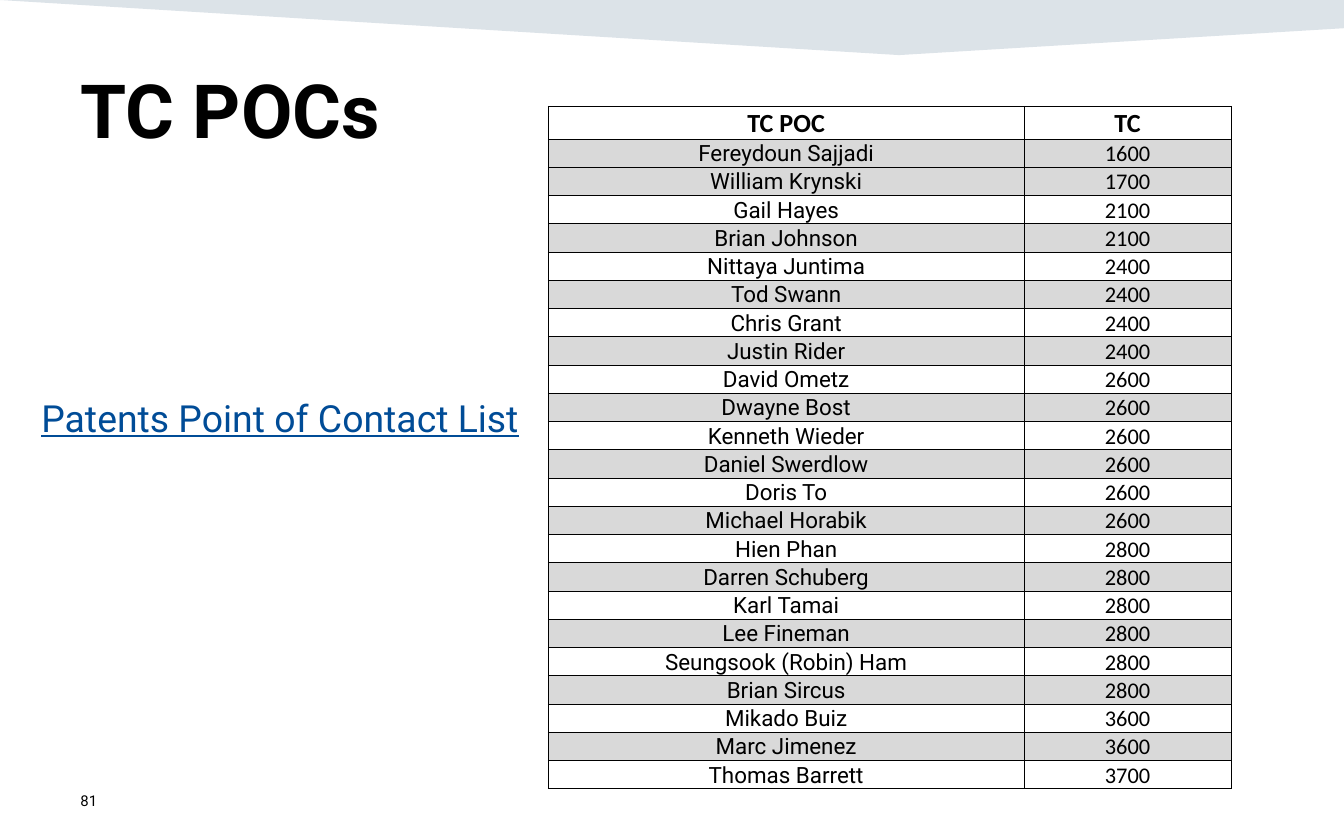
from lxml import etree
from pptx import Presentation
from pptx.dml.color import RGBColor
from pptx.enum.text import MSO_ANCHOR as ANCHOR, PP_ALIGN as ALIGN
from pptx.oxml import parse_xml
from pptx.oxml.ns import nsdecls, qn
from pptx.util import Inches, Pt

BLACK = RGBColor(0x00, 0x00, 0x00)
GREY = RGBColor(0xD9, 0xD9, 0xD9)
NAVY = RGBColor(0x16, 0x44, 0x69)
LINK = RGBColor(0x00, 0x4C, 0x97)

prs = Presentation()
prs.slide_width, prs.slide_height = Inches(10), Inches(6.25)
W, H = prs.slide_width, prs.slide_height
s = prs.slides.add_slide(prs.slide_layouts[6])


def area(*percents):
    """Turn percent of slide width, height, width, height... into lengths."""
    return [round(v * (H if i % 2 else W) / 100) for i, v in enumerate(percents)]


def write(tf, text, font, size, color=BLACK, align=ALIGN.LEFT, bold=False):
    p = tf.paragraphs[0]
    p.text, p.alignment = text, align
    p.font.name, p.font.size, p.font.bold = font, Pt(size), bold
    p.font.color.rgb = color
    return p


# Top band: a shallow translucent wedge
corners = [(0, 0), (100, 0), (100, 3.36), (66.9, 6.56)]
points = [area(*c) for c in corners]
fb = s.shapes.build_freeform(*points[0])
fb.add_line_segments(points[1:], close=True)
band = fb.convert_to_shape()
band.shadow.inherit = False
band.line.fill.background()
band.fill.solid()
band.fill.fore_color.rgb = NAVY
rgb = band.fill._xPr.find(qn("a:solidFill"))[0]
etree.SubElement(rgb, qn("a:alpha"), val="15000")

# Title, slide number and list caption
texts = [
    ("TC POCs", (5, 6.56, 90, 12.48), 40, BLACK, ALIGN.LEFT, ANCHOR.BOTTOM),
    ("81", (5, 92.64, 22.5, 5.28), 8, BLACK, ALIGN.LEFT, ANCHOR.MIDDLE),
    ("Patents Point of Contact List", (1.7, 46.24, 38.3, 7.04), 20, LINK,
     ALIGN.CENTER, ANCHOR.TOP),
]
for text, box, size, color, align, anchor in texts:
    tf = s.shapes.add_textbox(*area(*box)).text_frame
    tf.word_wrap, tf.vertical_anchor = True, anchor
    p = write(tf, text, "Roboto", size, color, align, bold=size == 40)
    p.font.underline = color == LINK

# Contact table
contacts = [
    ("TC POC", "TC"),
    ("Fereydoun Sajjadi", "1600"),
    ("William Krynski", "1700"),
    ("Gail Hayes", "2100"),
    ("Brian Johnson", "2100"),
    ("Nittaya Juntima", "2400"),
    ("Tod Swann", "2400"),
    ("Chris Grant", "2400"),
    ("Justin Rider", "2400"),
    ("David Ometz", "2600"),
    ("Dwayne Bost", "2600"),
    ("Kenneth Wieder", "2600"),
    ("Daniel Swerdlow", "2600"),
    ("Doris To", "2600"),
    ("Michael Horabik", "2600"),
    ("Hien Phan", "2800"),
    ("Darren Schuberg", "2800"),
    ("Karl Tamai", "2800"),
    ("Lee Fineman", "2800"),
    ("Seungsook (Robin) Ham", "2800"),
    ("Brian Sircus", "2800"),
    ("Mikado Buiz", "3600"),
    ("Marc Jimenez", "3600"),
    ("Thomas Barrett", "3700"),
]
frame = s.shapes.add_table(len(contacts), 2, *area(40.8, 12.64, 50.8, 80.64))
table = frame.table
table.first_row = table.horz_banding = False
for column, share in zip(table.columns, (35.4, 15.4)):
    column.width = area(share)[0]

for i, contact in enumerate(contacts):
    for j, text in enumerate(contact):
        cell = table.cell(i, j)
        header, name = i == 0, i > 0 and j == 0
        cell.margin_left = cell.margin_right = cell.margin_top = Inches(0.01)
        cell.margin_bottom = 0
        cell.vertical_anchor = ANCHOR.MIDDLE if name else ANCHOR.BOTTOM
        write(cell.text_frame, text, "Roboto" if name else "Calibri",
              14 if header else 12, align=ALIGN.CENTER, bold=header)
        # Borders come before the fill in the cell properties
        tcPr = cell._tc.get_or_add_tcPr()
        for side in ("lnL", "lnR", "lnT", "lnB"):
            tcPr.append(parse_xml(
                f'<a:{side} {nsdecls("a")} w="{Pt(0.5)}"><a:solidFill>'
                f'<a:srgbClr val="{BLACK}"/></a:solidFill></a:{side}>'))
        # Even rows are shaded, and so is the first contact
        if i == 1 or (i and i % 2 == 0 and i != 3):
            cell.fill.solid()
            cell.fill.fore_color.rgb = GREY
        else:
            cell.fill.background()

prs.save("out.pptx")
